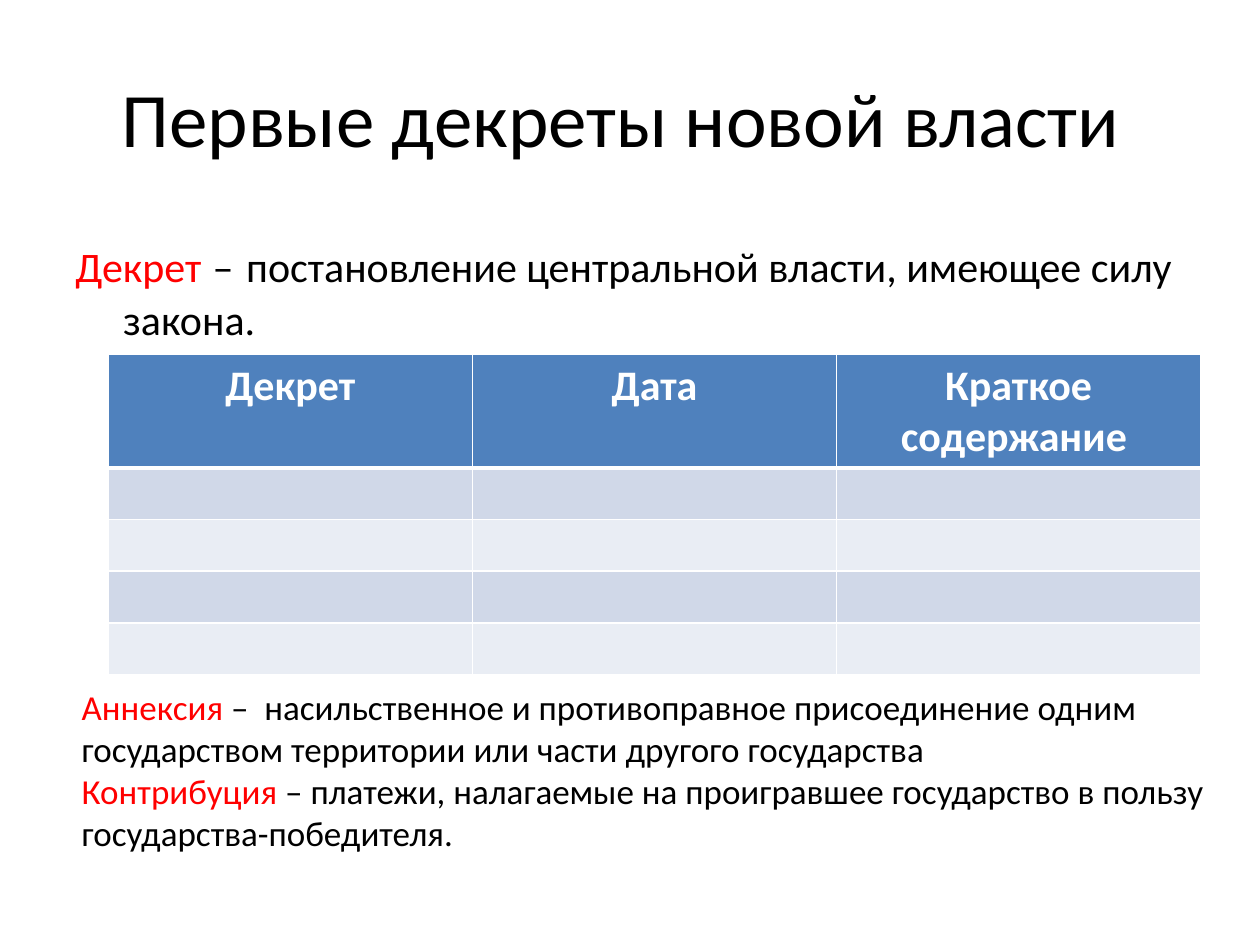
import pptx
import pptx.dml.color
import pptx.enum.text
import pptx.oxml
import pptx.oxml.ns
import pptx.util

WIDTH, HEIGHT = 10, 7.5
FONT = "Calibri"
COLORS = {
    "text": "000000",
    "term": "FF0000",
    "white": "FFFFFF",
    "header": "4F81BD",
    "odd": "D0D8E8",
    "even": "E9EDF4",
}
HEADINGS = ["Декрет", "Дата", "Краткое содержание "]
EMPTY_ROWS = 4
HEADER_HEIGHT, ROW_HEIGHT = 0.9, 0.41


def rgb(name):
    return pptx.dml.color.RGBColor.from_string(COLORS[name])


def box(left, top, width, height):
    return [pptx.util.Inches(v) for v in (left, top, width, height)]


def add_run(p, text, size=24, color="text", bold=False):
    r = p.add_run()
    r.text = text
    r.font.name = FONT
    r.font.size = pptx.util.Pt(size)
    r.font.bold = bold
    r.font.color.rgb = rgb(color)
    return r


def add_title(s, text):
    sp = s.shapes.title
    sp.left, sp.top, sp.width, sp.height = box(0.05 * WIDTH, 0.04 * HEIGHT, 0.9 * WIDTH, HEIGHT / 6)
    tf = sp.text_frame
    tf.vertical_anchor = pptx.enum.text.MSO_ANCHOR.MIDDLE
    p = tf.paragraphs[0]
    p.alignment = pptx.enum.text.PP_ALIGN.CENTER
    add_run(p, text, size=44)


def add_text(s, place, paragraphs, hanging=0):
    tf = s.shapes.add_textbox(*box(*place)).text_frame
    tf.word_wrap = True
    for i, runs in enumerate(paragraphs):
        p = tf.add_paragraph() if i else tf.paragraphs[0]
        if hanging:
            pPr = p._p.get_or_add_pPr()
            pPr.set("marL", str(pptx.util.Inches(hanging)))
            pPr.set("indent", str(-pptx.util.Inches(hanging)))
        for text, fmt in runs:
            add_run(p, text, **fmt)


def set_borders(cell, top=1, bottom=1):
    tcPr = cell._tc.get_or_add_tcPr()
    for i, (side, width) in enumerate({"L": 1, "R": 1, "T": top, "B": bottom}.items()):
        ln = pptx.oxml.parse_xml(
            f'<a:ln{side} {pptx.oxml.ns.nsdecls("a")} w="{pptx.util.Pt(width)}">'
            f'<a:solidFill><a:srgbClr val="{COLORS["white"]}"/></a:solidFill></a:ln{side}>'
        )
        tcPr.insert(i, ln)


def add_decree_table(s):
    place = box(0.086 * WIDTH, 0.375 * HEIGHT, 0.867 * WIDTH, HEADER_HEIGHT + EMPTY_ROWS * ROW_HEIGHT)
    table = s.shapes.add_table(EMPTY_ROWS + 1, len(HEADINGS), *place).table
    for i, row in enumerate(table.rows):
        row.height = pptx.util.Inches(ROW_HEIGHT if i else HEADER_HEIGHT)
        fill = "header" if i == 0 else "odd" if i % 2 else "even"
        for cell, heading in zip(row.cells, HEADINGS):
            cell.fill.solid()
            cell.fill.fore_color.rgb = rgb(fill)
            set_borders(cell, top=3 if i == 1 else 1, bottom=3 if i == 0 else 1)
            if i == 0:
                p = cell.text_frame.paragraphs[0]
                p.alignment = pptx.enum.text.PP_ALIGN.CENTER
                add_run(p, heading, color="white", bold=True)


def main():
    prs = pptx.Presentation()
    prs.slide_width = pptx.util.Inches(WIDTH)
    prs.slide_height = pptx.util.Inches(HEIGHT)
    s = prs.slides.add_slide(prs.slide_layouts[5])

    add_title(s, "Первые декреты новой власти ")
    add_text(s, (0.05 * WIDTH, 1.75, 0.9 * WIDTH, 0.66 * HEIGHT), [[
        ("Декрет", dict(color="term")),
        (" ", dict(size=28, bold=True)),
        ("–", {}),
        (" ", dict(size=32, bold=True)),
        ("постановление центральной власти, имеющее силу закона.", {}),
    ]], hanging=0.38)
    add_decree_table(s)
    term, body = dict(size=20, color="term"), dict(size=20)
    add_text(s, (0.055 * WIDTH, 5.39, 0.922 * WIDTH, 1.45), [
        [("Аннексия ", term),
         ("–  насильственное и противоправное присоединение одним государством "
          "территории или части другого государства", body)],
        [("Контрибуция", term),
         (" – платежи, налагаемые на проигравшее государство в пользу "
          "государства-победителя.", body)],
    ])
    prs.save("out.pptx")


if __name__ == "__main__":
    main()
